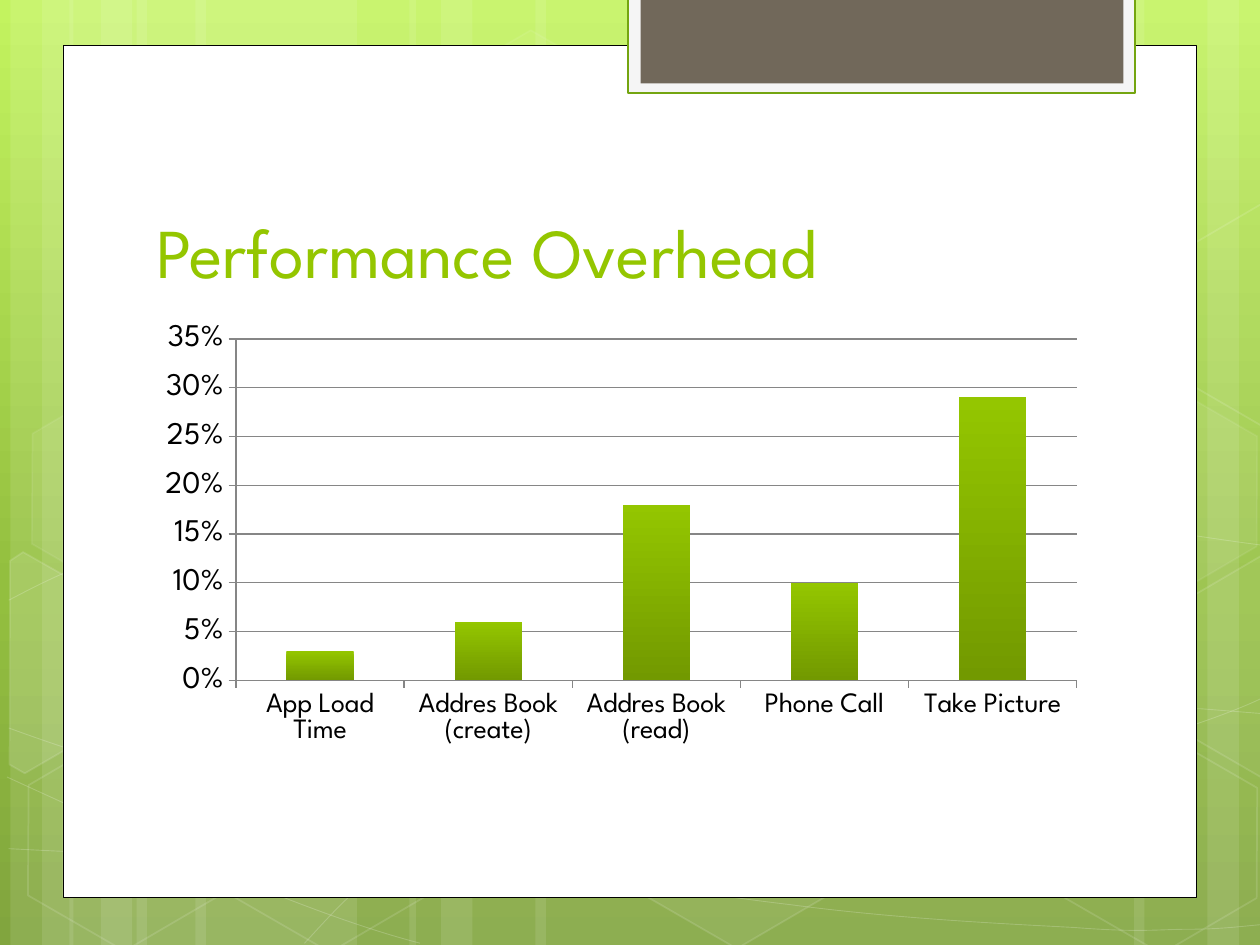
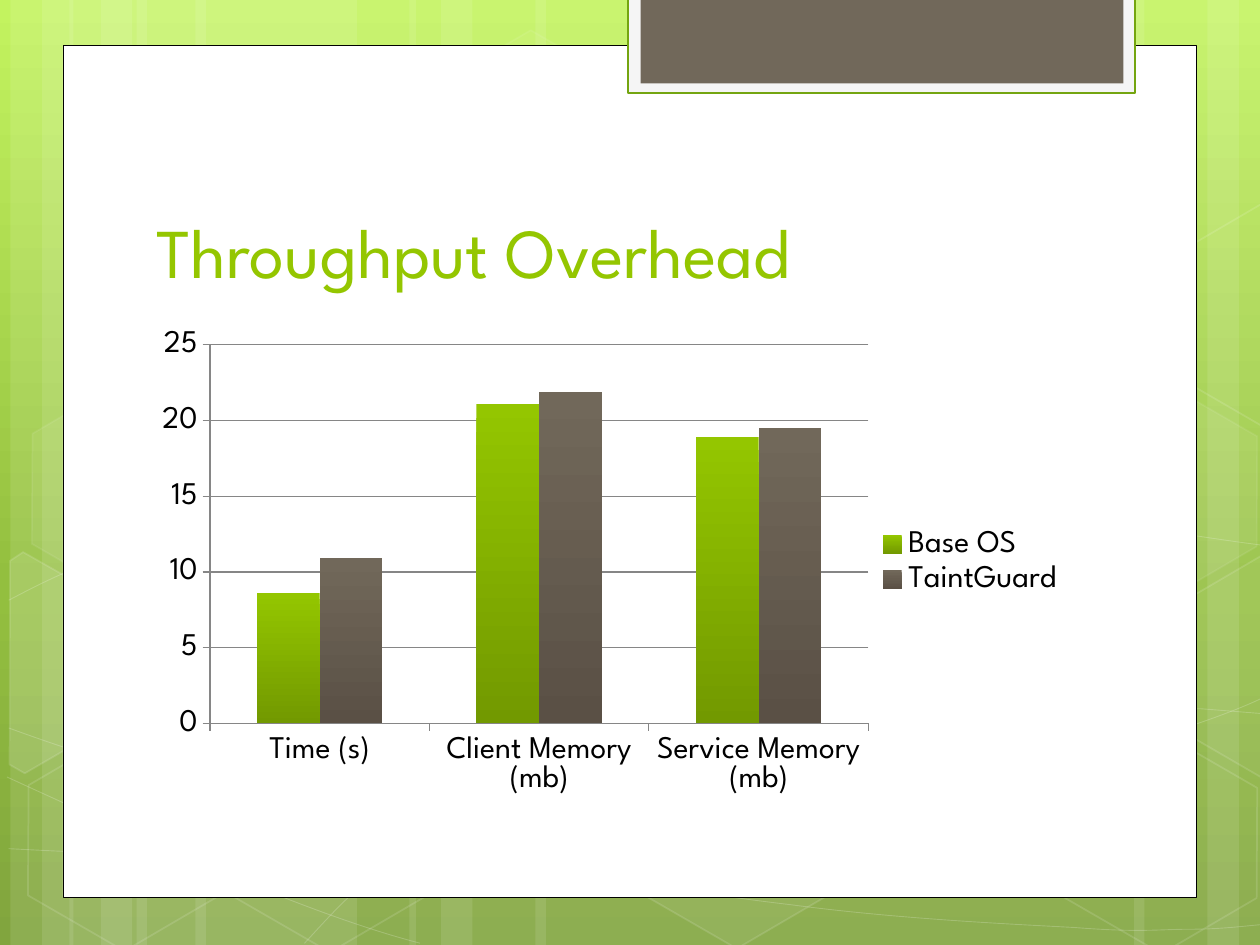
from copy import deepcopy

from lxml import etree
from pptx import Presentation
from pptx.chart.data import CategoryChartData
from pptx.dml.color import RGBColor
from pptx.enum.chart import XL_CHART_TYPE, XL_LEGEND_POSITION, XL_TICK_MARK
from pptx.enum.shapes import MSO_SHAPE
from pptx.enum.text import MSO_ANCHOR
from pptx.oxml.ns import qn
from pptx.util import Pt

RECT, HEXAGON = MSO_SHAPE.RECTANGLE, MSO_SHAPE.HEXAGON
COLUMNS = XL_CHART_TYPE.COLUMN_CLUSTERED
LEGEND_RIGHT = XL_LEGEND_POSITION.RIGHT
TICK_OUT = XL_TICK_MARK.OUTSIDE
BOTTOM = MSO_ANCHOR.BOTTOM

FONT = "League Spartan"
WHITE = RGBColor(0xFF, 0xFF, 0xFF)
BLACK = RGBColor(0x00, 0x00, 0x00)
PALE = RGBColor(0xF5, 0xF5, 0xF5)
GREEN = RGBColor(0x94, 0xC6, 0x00)
GREEN_DARK = RGBColor(0x72, 0x99, 0x00)
GREEN_EDGE = RGBColor(0x74, 0xA5, 0x10)
TAUPE = RGBColor(0x71, 0x68, 0x5A)
TAUPE_DARK = RGBColor(0x5A, 0x50, 0x45)
GREY = RGBColor(0x86, 0x86, 0x86)
SKY = [(0, RGBColor(0xC3, 0xF3, 0x5F)), (0.62, RGBColor(0x93, 0xBF, 0x3F)),
       (1, RGBColor(0x81, 0xA5, 0x3E))]
SERIES_COLORS = [(GREEN, GREEN_DARK), (TAUPE, TAUPE_DARK)]

# Boxes: left, top, width, height in points
SLIDE_W, SLIDE_H = 720, 540
PANEL = (36, 25.9, 648, 487)
CONTENT = (82.1, 80.6, 553, 378.8)

# Backdrop: stripes are (left, width)
STRIPES = [(78, 126), (6, 36), (24, 60), (111.6, 126), (39.6, 36), (57.6, 60),
           (528, 126), (690, 36), (648, 60), (306, 222), (234, 36), (252, 60)]
# Each curve is a start point, then two controls and an end for each piece
CURVES = [
    [(5, 485), (44, 487), (83, 489), (137, 488), (191, 487), (258, 486), (330, 479),
     (402, 472), (504, 458), (570, 444), (636, 431), (703, 409), (725, 397)],
    [(5, 343), (26, 332), (47, 321), (87, 310), (129, 300), (186, 284), (250, 279),
     (314, 274), (392, 273), (471, 279), (550, 284), (682, 307), (725, 312)],
    [(4, 444), (91, 484), (178, 523), (240, 539)],
    [(5, 416), (27, 424), (50, 432), (92, 444), (134, 454), (197, 472), (257, 485),
     (317, 497), (392, 510), (452, 517), (512, 525), (576, 528), (614, 530),
     (652, 533), (662, 531), (680, 531), (699, 531), (712, 529), (725, 528)],
    [(174, 539), (187, 525), (200, 510), (217, 498), (235, 485), (259, 470), (279, 460),
     (300, 450), (312, 446), (338, 438), (364, 431), (413, 421), (438, 416),
     (464, 411), (467, 411), (490, 410), (512, 408), (547, 405), (572, 405),
     (597, 404), (638, 405), (638, 405), (654, 405), (670, 405), (686, 405),
     (699, 406), (711, 407), (724, 408)],
]
# Hexagons are (left, top, fill opacity, line opacity)
HEXAGONS = [(240.5, 25.9, 4, 8), (357.8, 424.1, 6, 12), (7.9, 425.5, 0, 12),
            (10.1, 224.6, 7, 8), (125.3, 426.2, 0, 12), (542.2, 326.2, 10, 12),
            (600.5, 427, 0, 12), (600.5, 226.1, 7, 8)]
# Hexagons cut by the slide's edge are (points before turning, fill opacity)
LEFT_CUT = [(-24, 339), (-20, 331), (44, 330.5), (75, 386), (44, 440), (34, 440)]
RIGHT_CUT = [(659.8, 373.8), (690.8, 319.4), (697.5, 319.6), (757.7, 423.7),
             (754.7, 428.8), (691.5, 428.7)]
CUT_HEXAGONS = [(LEFT_CUT, 10), (RIGHT_CUT, 4), ([(x, y - 201) for x, y in RIGHT_CUT], 0)]


def set_opacity(sp, tag, percent):
    color = sp.element.spPr.find(tag).find(".//" + qn("a:srgbClr"))
    etree.SubElement(color, qn("a:alpha"), val=str(percent * 1000))


def paint(sp, fill=None, line=None, width=1, fill_opacity=100, line_opacity=100):
    sp.shadow.inherit = False
    if fill is None or fill_opacity == 0:
        sp.fill.background()
    else:
        sp.fill.solid()
        sp.fill.fore_color.rgb = fill
        if fill_opacity < 100:
            set_opacity(sp, qn("a:solidFill"), fill_opacity)
    if line is None:
        sp.line.fill.background()
    else:
        sp.line.color.rgb = line
        sp.line.width = Pt(width)
        if line_opacity < 100:
            set_opacity(sp, qn("a:ln"), line_opacity)


def add_box(s, kind, x, y, w, h, **style):
    sp = s.shapes.add_shape(kind, Pt(x), Pt(y), Pt(w), Pt(h))
    paint(sp, **style)
    return sp


def add_outline(s, points, close, **style):
    emu = [(Pt(x), Pt(y)) for x, y in points]
    builder = s.shapes.build_freeform(*emu[0])
    builder.add_line_segments(emu[1:], close=close)
    sp = builder.convert_to_shape()
    paint(sp, **style)
    return sp


def bend(sp):
    """Turn each three line segments into one cubic curve."""
    outline = sp.element.find(".//" + qn("a:path"))
    segments = outline.findall(qn("a:lnTo"))
    for i in range(0, len(segments), 3):
        cubic = etree.SubElement(outline, qn("a:cubicBezTo"))
        for segment in segments[i:i + 3]:
            cubic.append(segment[0])
            outline.remove(segment)


def add_backdrop(s):
    # Gradient
    fill = s.background.fill
    fill.gradient()
    fill.gradient_angle = 270
    stop_list = s.element.find(".//" + qn("a:gsLst"))
    stop_list.append(deepcopy(stop_list[-1]))
    for stop, (position, color) in zip(fill.gradient_stops, SKY):
        stop.position = position
        stop.color.rgb = color
    # Stripes, curves and hexagons
    for x, w in STRIPES:
        add_box(s, RECT, x, 0, w, SLIDE_H, fill=WHITE, fill_opacity=10)
    for points in CURVES:
        bend(add_outline(s, points, False, line=WHITE, width=0.5, line_opacity=20))
    for x, y, fill_opacity, line_opacity in HEXAGONS:
        sp = add_box(s, HEXAGON, x, y, 126, 109.4, fill=WHITE, line=WHITE,
                     fill_opacity=fill_opacity, line_opacity=line_opacity)
        sp.adjustments[0], sp.adjustments[1] = 0.285, 1.155
        sp.rotation = 30
    for points, fill_opacity in CUT_HEXAGONS:
        sp = add_outline(s, points, True, fill=WHITE, line=WHITE,
                         fill_opacity=fill_opacity, line_opacity=12)
        sp.rotation = 30


def add_panel(s, box):
    x, y, w, h = box
    add_box(s, RECT, x, y, w, h, fill=WHITE, line=BLACK, width=0.5)
    # Tab hanging from the top edge
    tab_x, tab_y = x + 323.1, y - 27.3
    add_box(s, RECT, tab_x, tab_y, 289.6, 54.7, fill=PALE, line=GREEN_EDGE, width=1.25)
    add_box(s, RECT, tab_x + 6.9, tab_y, 276, 49, fill=TAUPE)


def add_title(s, box, text):
    x, y, w, h = box
    tf = s.shapes.add_textbox(Pt(x), Pt(y), Pt(w), Pt(90)).text_frame
    tf.word_wrap = True
    tf.vertical_anchor = BOTTOM
    p = tf.paragraphs[0]
    p.text = text
    p.font.name, p.font.size, p.font.color.rgb = FONT, Pt(40), GREEN


def set_plot_area(chart, x, y, w, h):
    area = chart.element.find(".//" + qn("c:plotArea"))
    layout = area.find(qn("c:layout"))
    if layout is None:
        layout = etree.Element(qn("c:layout"))
        area.insert(0, layout)
    manual = etree.SubElement(layout, qn("c:manualLayout"))
    for tag, val in [("layoutTarget", "inner"), ("xMode", "edge"), ("yMode", "edge"),
                     ("x", x), ("y", y), ("w", w), ("h", h)]:
        etree.SubElement(manual, qn("c:" + tag), val=str(val))


def add_column_chart(s, box, categories, series, top, step, plot_box,
                     number_format="General", category_size=18, legend=False):
    x, y, w, h = box
    chart_w, chart_h = w - 19.5, h - 102.3
    data = CategoryChartData()
    data.categories = categories
    for name, values in series:
        data.add_series(name, values)
    chart = s.shapes.add_chart(COLUMNS, Pt(x), Pt(y + 102.3), Pt(chart_w),
                               Pt(chart_h), data).chart
    chart.has_title = False
    chart.font.name, chart.font.size, chart.font.color.rgb = FONT, Pt(18), BLACK
    chart.has_legend = legend
    if legend:
        chart.legend.position = LEGEND_RIGHT
        chart.legend.include_in_layout = False
    # Axes
    cat_axis, val_axis = chart.category_axis, chart.value_axis
    val_axis.minimum_scale, val_axis.maximum_scale = 0, top
    val_axis.major_unit = step
    val_axis.has_major_gridlines = True
    val_axis.tick_labels.number_format = number_format
    val_axis.tick_labels.number_format_is_linked = False
    cat_axis.tick_labels.font.size = Pt(category_size)
    for axis in (cat_axis, val_axis):
        axis.major_tick_mark = TICK_OUT
    for part in (cat_axis, val_axis, val_axis.major_gridlines):
        part.format.line.color.rgb = GREY
        part.format.line.width = Pt(0.75)
    # Columns
    plot = chart.plots[0]
    plot.gap_width, plot.overlap, plot.vary_by_categories = 150, 0, False
    for column, colors in zip(plot.series, SERIES_COLORS):
        fill = column.format.fill
        fill.gradient()
        fill.gradient_angle = 270
        for stop, color in zip(fill.gradient_stops, colors):
            stop.color.rgb = color
    # Plot area, as shares of the chart's size
    left, upper, wide, high = plot_box
    set_plot_area(chart, left / chart_w, upper / chart_h, wide / chart_w, high / chart_h)


def add_chart_slide(prs, title, **chart):
    s = prs.slides.add_slide(prs.slide_layouts[6])
    add_backdrop(s)
    add_panel(s, PANEL)
    add_title(s, CONTENT, title)
    add_column_chart(s, CONTENT, **chart)


def main():
    prs = Presentation()
    prs.slide_width, prs.slide_height = Pt(SLIDE_W), Pt(SLIDE_H)
    add_chart_slide(
        prs, "Performance Overhead",
        categories=["App Load Time", "Addres Book (create)", "Addres Book (read)",
                    "Phone Call", "Take Picture"],
        series=[("Series 1", [0.03, 0.06, 0.18, 0.1, 0.29])],
        top=0.35, step=0.05, number_format="0%", category_size=16,
        plot_box=(52.8, 10.8, 480.7, 195.2))
    add_chart_slide(
        prs, "Throughput Overhead",
        categories=["Time (s)", "Client Memory (mb)", "Service Memory (mb)"],
        series=[("Base OS", [8.6, 21.1, 18.9]), ("TaintGuard", [10.9, 21.9, 19.5])],
        top=25, step=5, legend=True, plot_box=(37.9, 14.1, 376.2, 216.5))
    prs.save("out.pptx")


if __name__ == "__main__":
    main()
